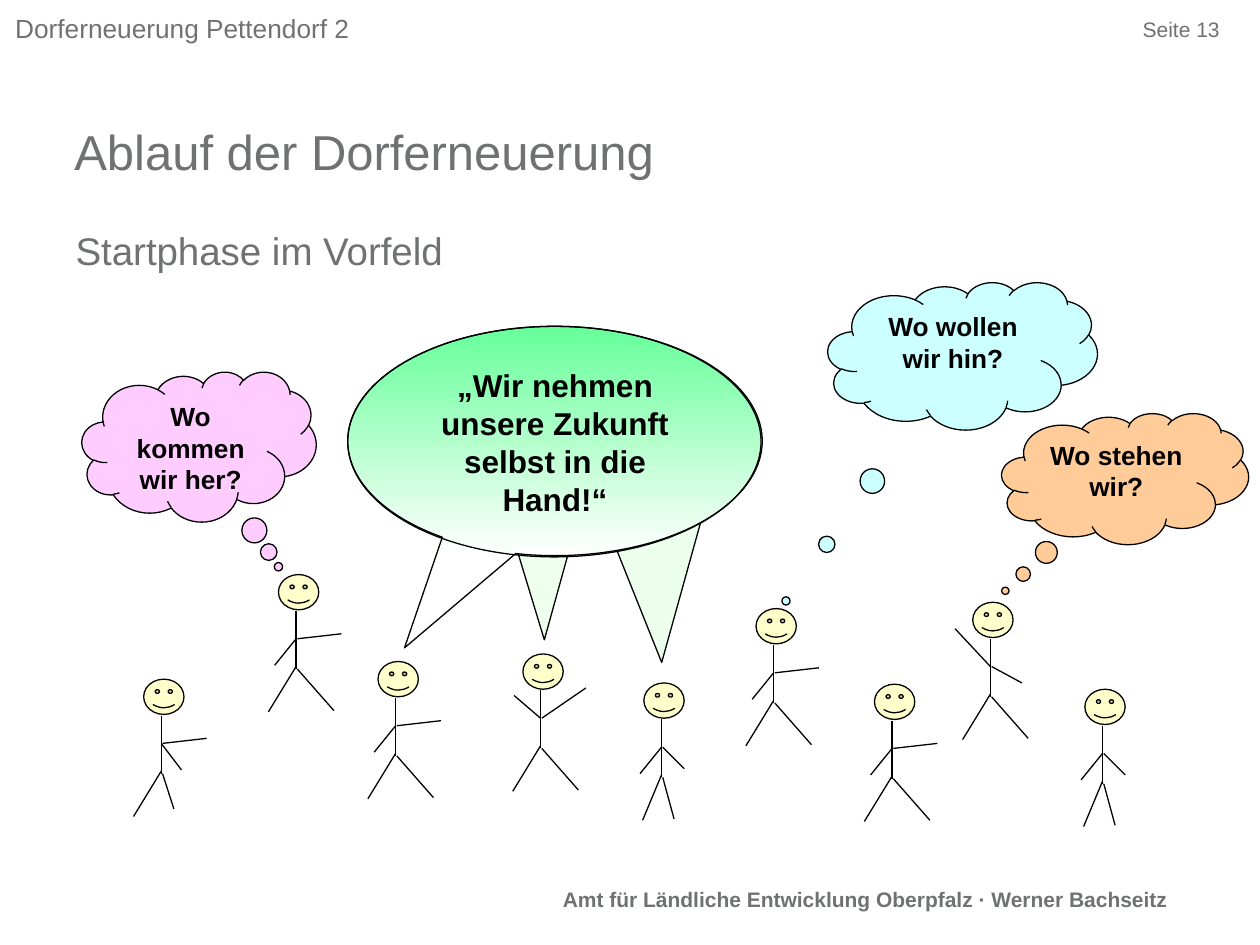
import pptx
import pptx.util
import pptx.dml.color
import pptx.enum.shapes
import pptx.enum.text
import pptx.oxml
import pptx.oxml.ns

RGBColor = pptx.dml.color.RGBColor
Pt = pptx.util.Pt
SHAPE = pptx.enum.shapes.MSO_SHAPE
ALIGN = pptx.enum.text.PP_ALIGN
ANCHOR = pptx.enum.text.MSO_ANCHOR

GREY = RGBColor(0x70, 0x71, 0x73)
BLACK = RGBColor(0, 0, 0)
WHITE = RGBColor(0xFF, 0xFF, 0xFF)
SKIN = RGBColor(0xFF, 0xFF, 0xCC)
PINK = RGBColor(0xFF, 0xCC, 0xFF)
CYAN = RGBColor(0xCC, 0xFF, 0xFF)
ORANGE = RGBColor(0xFF, 0xCC, 0x99)
GREEN = RGBColor(0x66, 0xFF, 0x99)
PALE_GREEN = RGBColor(0xCC, 0xFF, 0xCC)

FONT = "Arial"
SLIDE_W, SLIDE_H = pptx.util.Inches(10), pptx.util.Inches(7.5)
COLUMNS, ROWS = 100, 75

# Limb ends in grid cells, measured from the neck
HIP_LEFT, HIP_RIGHT = (0, 4.4), (0.1, 4.6)
SHOULDER_LEFT, SHOULDER_RIGHT = (0, 2.2), (0.1, 2.2)
STRIDE = ((-2.2, 8), (3, 7.9))
STAND = ((-1.5, 8), (1, 7.9))
LEAN = ((-2.2, 8), (1, 7.4))
POINT = ((-1.7, 4.3), (3.6, 1.8))
HANG = ((-1.7, 4.3), (1.8, 3.9))
CHEER = ((-2.1, 0.4), (3.6, -0.2))
WAVE = ((-2.8, -0.8), (2.5, 3.5))
REACH = ((1.6, 4.3), (3.6, 1.8))

# Head column, head row, legs, arms
VILLAGERS = [
    (22.1, 45.6, STRIDE, POINT),
    (51.1, 54.2, STAND, HANG),
    (77.2, 47.8, STRIDE, WAVE),
    (60, 48.3, STRIDE, POINT),
    (30, 52.5, STRIDE, POINT),
    (41.5, 51.9, STRIDE, CHEER),
    (11.4, 53.9, LEAN, REACH),
    (69.4, 54.3, STRIDE, POINT),
    (86.1, 54.7, STAND, HANG),
]

# Text, cell box, tail position, fill
THOUGHTS = [
    ("Wo kommen wir her?", (6.5, 29.5, 18.6, 11.9), (0.339, 0.801), PINK),
    ("Wo wollen wir hin?", (65.7, 22.4, 21.4, 11.7), (-0.655, 1.662), CYAN),
    ("Wo stehen wir?", (79.5, 32.8, 19.6, 10.4), (-0.485, 0.855), ORANGE),
]


def place(column, row):
    """Turn grid cells into slide lengths."""
    return round(SLIDE_W * column / COLUMNS), round(SLIDE_H * row / ROWS)


def box(left, top, width, height):
    return place(left, top) + place(width, height)


def write(shape, text, size, color, align=ALIGN.LEFT, bold=False):
    frame = shape.text_frame
    frame.word_wrap = True
    frame.text = text
    paragraph = frame.paragraphs[0]
    paragraph.alignment = align
    font = paragraph.runs[0].font
    font.name, font.size, font.bold = FONT, Pt(size), bold
    font.color.rgb = color
    return paragraph


def add_running_text(slide, text, cells, size, align, anchor=ANCHOR.TOP, bold=False):
    label = slide.shapes.add_textbox(*box(*cells))
    frame = label.text_frame
    frame.margin_left = frame.margin_right = frame.margin_top = frame.margin_bottom = 0
    frame.vertical_anchor = anchor
    write(label, text, size, GREY, align, bold)


def fill_placeholder(placeholder, text, cells, size, anchor):
    placeholder.left, placeholder.top, placeholder.width, placeholder.height = box(*cells)
    frame = placeholder.text_frame
    frame.auto_size = pptx.enum.text.MSO_AUTO_SIZE.NONE
    frame.vertical_anchor = anchor
    paragraph = write(placeholder, text, size, GREY)
    paragraph.space_before = Pt(0)
    return paragraph


def remove_bullet(paragraph):
    properties = paragraph._p.get_or_add_pPr()
    properties.set("marL", "0")
    properties.set("indent", "0")
    properties.append(pptx.oxml.parse_xml(
        "<a:buNone %s/>" % pptx.oxml.ns.nsdecls("a")))


def add_outlined(shapes, kind, cells, fill=None):
    shape = shapes.add_shape(kind, *box(*cells))
    shape.shadow.inherit = False
    shape.line.color.rgb = BLACK
    shape.line.width = Pt(0.75)
    if fill is None:
        shape.fill.background()
    else:
        shape.fill.solid()
        shape.fill.fore_color.rgb = fill
    return shape


def add_bubble(shapes, kind, cells, tail, text, size, fill=None):
    bubble = add_outlined(shapes, kind, cells, fill)
    bubble.adjustments[0], bubble.adjustments[1] = tail
    bubble.text_frame.vertical_anchor = ANCHOR.TOP
    write(bubble, text, size, BLACK, ALIGN.CENTER, bold=True)
    return bubble


def add_stroke(shapes, start, end):
    stroke = shapes.add_connector(
        pptx.enum.shapes.MSO_CONNECTOR.STRAIGHT, *place(*start), *place(*end))
    stroke.line.color.rgb = BLACK
    stroke.line.width = Pt(0.75)
    stroke._element.spPr.append(pptx.oxml.parse_xml(
        "<a:effectLst %s/>" % pptx.oxml.ns.nsdecls("a")))


def add_villager(slide, column, row, legs, arms):
    body = slide.shapes.add_group_shape().shapes
    neck_column, neck_row = column + 1.4, row + 2.9
    limbs = [((0, 0), (0, 4.6)),
             (HIP_LEFT, legs[0]), (HIP_RIGHT, legs[1]),
             (SHOULDER_LEFT, arms[0]), (SHOULDER_RIGHT, arms[1])]
    for limb in limbs:
        start, end = [(neck_column + x, neck_row + y) for x, y in limb]
        add_stroke(body, start, end)
    add_outlined(body, SHAPE.SMILEY_FACE, (column, row, 3.2, 2.8), SKIN)


def add_tail(shapes, cells, angle, opacity):
    """Extra speech tail, partly covered by the shared bubble."""
    tail = add_outlined(shapes, SHAPE.RIGHT_TRIANGLE, cells, PALE_GREEN)
    tail.rotation = angle
    color = tail._element.spPr.find(".//" + pptx.oxml.ns.qn("a:srgbClr"))
    color.append(pptx.oxml.parse_xml(
        '<a:alpha %s val="%d"/>' % (pptx.oxml.ns.nsdecls("a"), opacity * 1000)))


def add_shared_speech(slide):
    speech = slide.shapes.add_group_shape().shapes
    add_tail(speech, (49.3, 43, 9.7, 7.4), 68.2, 37)
    add_tail(speech, (40.4, 43.5, 8.2, 5.2), 73.1, 32)
    bubble = add_bubble(speech, SHAPE.OVAL_CALLOUT, (27.6, 25.9, 32.9, 18.2),
                        (-0.363, 0.902),
                        "„Wir nehmen unsere Zukunft selbst in die Hand!“", 18)
    bubble.fill.gradient()
    bubble.fill.gradient_angle = 270
    for stop, color, position in zip(bubble.fill.gradient_stops, (GREEN, WHITE), (0, 1)):
        stop.color.rgb = color
        stop.position = position
    add_outlined(speech, SHAPE.OVAL, (27.6, 25.9, 32.8, 18.3))


def main():
    presentation = pptx.Presentation()
    presentation.slide_width, presentation.slide_height = SLIDE_W, SLIDE_H
    slide = presentation.slides.add_slide(presentation.slide_layouts[1])

    add_running_text(slide, "Seite 13", (87.6, 1.2, 9.2, 2.2), 12,
                     ALIGN.RIGHT, ANCHOR.MIDDLE)
    add_running_text(slide, "Dorferneuerung Pettendorf 2", (1.2, 1, 73.1, 3.9), 15,
                     ALIGN.LEFT)
    add_running_text(slide, "Amt für Ländliche Entwicklung Oberpfalz · Werner Bachseitz",
                     (15.3, 70.4, 77.4, 2.4), 12, ALIGN.RIGHT, bold=True)
    fill_placeholder(slide.shapes.title, "Ablauf der Dorferneuerung",
                     (4.9, 8.7, 91.9, 6.6), 28, ANCHOR.MIDDLE)
    remove_bullet(fill_placeholder(slide.placeholders[1], "Startphase im Vorfeld",
                                   (5, 17.5, 90, 49.5), 22, ANCHOR.TOP))

    for villager in VILLAGERS:
        add_villager(slide, *villager)
    for text, cells, tail, fill in THOUGHTS:
        add_bubble(slide.shapes, SHAPE.CLOUD_CALLOUT, cells, tail, text, 15, fill)
    add_shared_speech(slide)

    presentation.save("out.pptx")


if __name__ == "__main__":
    main()
